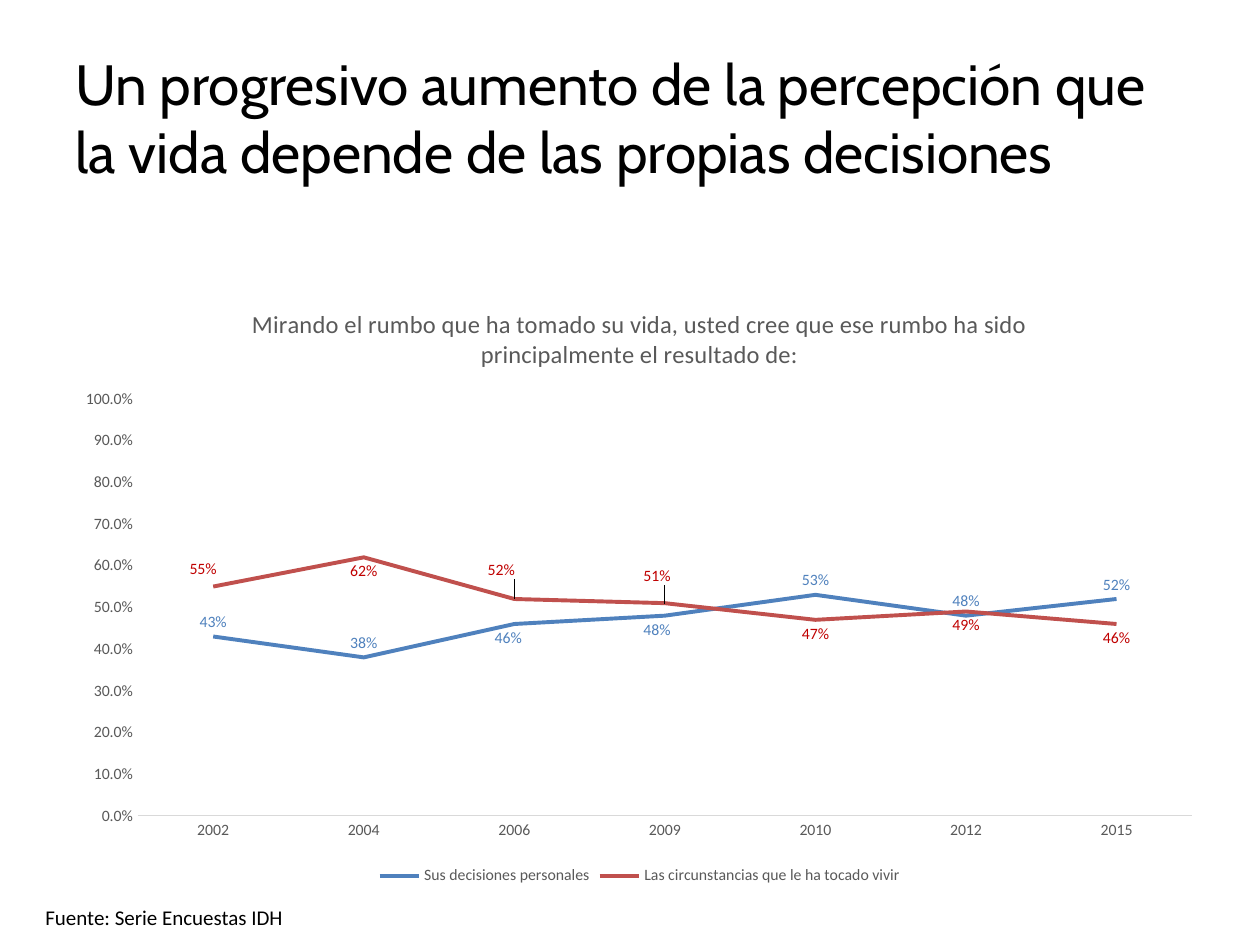
from dataclasses import dataclass

from lxml.etree import SubElement
from pptx import Presentation
from pptx.chart.chart import Chart
from pptx.chart.data import CategoryChartData
from pptx.chart.series import LineSeries
from pptx.dml.color import RGBColor
from pptx.enum.chart import (XL_CHART_TYPE, XL_LABEL_POSITION, XL_LEGEND_POSITION,
                             XL_MARKER_STYLE, XL_TICK_MARK)
from pptx.enum.text import MSO_ANCHOR
from pptx.oxml.ns import qn
from pptx.util import Emu, Pt

PX = 914400 / 126
COLORS = {
    "text": "000000",
    "muted": "595959",
    "axis": "D9D9D9",
    "blue": "4F81BD",
    "red": "C0504D",
    "red label": "C00000",
}
CHART_BOX = (63, 284, 1153, 606)
PLOT_BOX = (75, 115, 1054, 417)  # within the chart
ABOVE, BELOW = XL_LABEL_POSITION.ABOVE, XL_LABEL_POSITION.BELOW


@dataclass(frozen=True)
class MovedLabel:
    point: int
    side: XL_LABEL_POSITION
    dx: int
    dy: int


@dataclass(frozen=True)
class Answer:
    name: str
    shares: tuple[float, ...]
    line: str
    label: str
    side: XL_LABEL_POSITION
    moved: tuple[MovedLabel, ...]


@dataclass(frozen=True)
class Caption:
    text: str
    box: tuple[int, int, int, int]
    font: str
    size: float
    wrap: bool
    anchor: MSO_ANCHOR


YEARS = ("2002", "2004", "2006", "2009", "2010", "2012", "2015")
QUESTION = ("Mirando el rumbo que ha tomado su vida, usted cree que ese rumbo "
            "ha sido principalmente el resultado de:")
ANSWERS = (
    Answer("Sus decisiones personales",
           (0.43, 0.38, 0.46, 0.48, 0.53, 0.48, 0.52), "blue", "blue", ABOVE,
           (MovedLabel(2, BELOW, -6, 0), MovedLabel(3, BELOW, -8, 0))),
    Answer("Las circunstancias que le ha tocado vivir",
           (0.55, 0.62, 0.52, 0.51, 0.47, 0.49, 0.46), "red", "red label", BELOW,
           (MovedLabel(0, ABOVE, -10, -3), MovedLabel(2, ABOVE, -13, -15),
            MovedLabel(3, ABOVE, -8, -13))),
)
HEADLINE = Caption("Un progresivo aumento de la percepción que la vida depende "
                   "de las propias decisiones",
                   (63, 38, 1134, 158), "Cabin", 32.4, True, MSO_ANCHOR.MIDDLE)
SOURCE = Caption("Fuente: Serie Encuestas IDH",
                 (33, 898, 266, 38), "Calibri", 12, False, MSO_ANCHOR.TOP)


def px(length: int) -> Emu:
    return Emu(round(length * PX))


def rgb(name: str) -> RGBColor:
    return RGBColor.from_string(COLORS[name])


def style_font(font, size: float, color: str, name: str = "Calibri") -> None:
    font.name, font.size, font.bold = name, Pt(size), False
    font.color.rgb = rgb(color)


def add_caption(slide, caption: Caption) -> None:
    frame = slide.shapes.add_textbox(*map(px, caption.box)).text_frame
    frame.word_wrap = caption.wrap
    frame.vertical_anchor = caption.anchor
    paragraph = frame.paragraphs[0]
    paragraph.text = caption.text
    style_font(paragraph.font, caption.size, "text", caption.font)


def set_layout(parent, index: int, **settings: str | float) -> None:
    """Give a chart part a manual layout, as fractions of the chart."""
    for old in parent.findall(qn("c:layout")):
        parent.remove(old)
    layout = parent.makeelement(qn("c:layout"), {})
    parent.insert(index, layout)
    manual = SubElement(layout, qn("c:manualLayout"))
    for tag, value in settings.items():
        SubElement(manual, qn(f"c:{tag}")).set("val", str(value))


def style_series(series: LineSeries, answer: Answer) -> None:
    series.smooth = False
    series.marker.style = XL_MARKER_STYLE.NONE
    series.format.line.width = Pt(2.25)
    series.format.line.color.rgb = rgb(answer.line)
    labels = series.data_labels
    labels.show_value = True
    labels.number_format, labels.number_format_is_linked = "0%", False
    labels.position = answer.side
    style_font(labels.font, 9, answer.label)
    for moved in answer.moved:
        label = series.points[moved.point].data_label
        style_font(label.font, 9, answer.label)
        label.position = moved.side


def place_parts(chart: Chart) -> None:
    """Fix the plot area and shift the moved labels."""
    width, height = CHART_BOX[2:]
    left, top, plot_width, plot_height = PLOT_BOX
    set_layout(chart.element.find(".//" + qn("c:plotArea")), 0,
               layoutTarget="inner", xMode="edge", yMode="edge",
               x=round(left / width, 4), y=round(top / height, 4),
               w=round(plot_width / width, 4), h=round(plot_height / height, 4))
    for answer, series in zip(ANSWERS, chart.element.iter(qn("c:ser"))):
        for moved, label in zip(answer.moved, series.iter(qn("c:dLbl"))):
            set_layout(label, 1, x=round(moved.dx / width, 4),
                       y=round(moved.dy / height, 4))


def style_axes(chart: Chart) -> None:
    for axis in (chart.category_axis, chart.value_axis):
        axis.major_tick_mark = axis.minor_tick_mark = XL_TICK_MARK.NONE
        axis.has_major_gridlines = False
        style_font(axis.tick_labels.font, 9, "muted")
    baseline = chart.category_axis.format.line
    baseline.width = Pt(0.75)
    baseline.color.rgb = rgb("axis")
    shares = chart.value_axis
    shares.format.line.fill.background()
    shares.minimum_scale, shares.maximum_scale, shares.major_unit = 0, 1, 0.1
    shares.tick_labels.number_format = "0.0%"
    shares.tick_labels.number_format_is_linked = False


def add_answers_chart(slide) -> None:
    data = CategoryChartData(number_format="0%")
    data.categories = YEARS
    for answer in ANSWERS:
        data.add_series(answer.name, answer.shares)
    chart = slide.shapes.add_chart(XL_CHART_TYPE.LINE, *map(px, CHART_BOX), data).chart
    style_font(chart.font, 10, "text")
    chart.has_title = True
    question = chart.chart_title.text_frame.paragraphs[0]
    question.text = QUESTION
    style_font(question.font, 14, "muted")
    chart.has_legend = True
    chart.legend.position = XL_LEGEND_POSITION.BOTTOM
    chart.legend.include_in_layout = False
    style_font(chart.legend.font, 9, "muted")
    style_axes(chart)
    plot = chart.plots[0]
    plot.vary_by_categories = False
    for series, answer in zip(plot.series, ANSWERS):
        style_series(series, answer)
    place_parts(chart)


def main() -> None:
    deck = Presentation()
    deck.slide_width, deck.slide_height = px(1260), px(945)
    slide = deck.slides.add_slide(deck.slide_layouts[6])
    add_caption(slide, HEADLINE)
    add_answers_chart(slide)
    add_caption(slide, SOURCE)
    deck.save("out.pptx")


if __name__ == "__main__":
    main()
